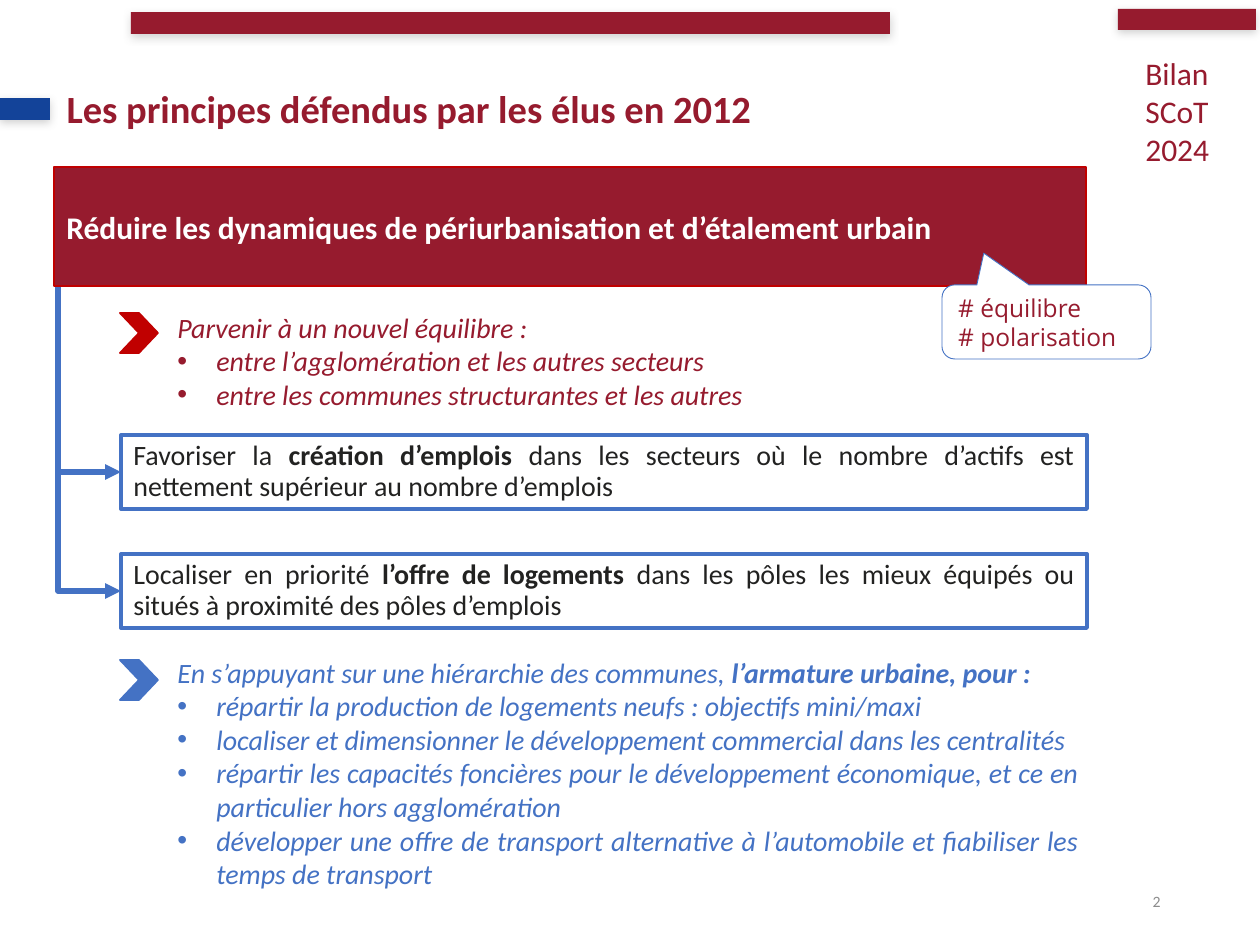
from lxml.etree import SubElement
from pptx import Presentation
from pptx.dml.color import RGBColor
from pptx.enum.shapes import MSO_CONNECTOR, MSO_SHAPE
from pptx.enum.text import MSO_ANCHOR, MSO_AUTO_SIZE, PP_ALIGN
from pptx.oxml import parse_xml
from pptx.oxml.ns import nsdecls, qn
from pptx.util import Pt

EMU_PER_PX = 914400 / 126
RED, BRIGHT_RED, NAVY, BLUE = "961B2E", "C00000", "134399", "4472C4"
WHITE, INK, GREY = "FFFFFF", "222221", "8C8C8C"


def px(length):
    """Turn whole pixels into EMU."""
    return round(length * EMU_PER_PX)


def box_px(box):
    """Turn a left, top, width, height box into EMU."""
    return [px(length) for length in box]


def color(hex_code):
    """Return the colour for a hex string."""
    return RGBColor.from_string(hex_code)


def add_bullet(paragraph):
    """Give a paragraph a hanging round bullet."""
    properties = paragraph._p.get_or_add_pPr()
    properties.set("marL", str(px(39)))
    properties.set("indent", str(-px(39)))
    SubElement(properties, qn("a:buFont"), typeface="Arial")
    SubElement(properties, qn("a:buChar"), char="•")


def write(holder, lines, size, ink, *, font="Calibri", bold=None, italic=None,
          align=PP_ALIGN.LEFT, anchor=MSO_ANCHOR.TOP, spacing=None):
    """Write lines, with ** around bold words and a leading • for bullets."""
    frame = holder.text_frame
    frame.word_wrap = True
    frame.auto_size = MSO_AUTO_SIZE.NONE
    frame.vertical_anchor = anchor
    for index, line in enumerate(lines):
        paragraph = frame.add_paragraph() if index else frame.paragraphs[0]
        if line.startswith("•"):
            add_bullet(paragraph)
        paragraph.alignment = align
        paragraph.line_spacing = spacing
        paragraph.font.name = font
        paragraph.font.size = Pt(size)
        paragraph.font.bold = bold
        paragraph.font.italic = italic
        paragraph.font.color.rgb = color(ink)
        for position, words in enumerate(line.lstrip("•").split("**")):
            run = paragraph.add_run()
            run.text = words
            if position % 2:
                run.font.bold = True


def add_text(slide, box, lines, size, ink, **style):
    """Add a text box."""
    write(slide.shapes.add_textbox(*box_px(box)), lines, size, ink, **style)


def add_panel(slide, kind, box, fill, line=None, width=1):
    """Add a filled preset shape without shadow."""
    panel = slide.shapes.add_shape(kind, *box_px(box))
    panel.shadow.inherit = False
    panel.fill.solid()
    panel.fill.fore_color.rgb = color(fill)
    if line:
        panel.line.color.rgb = color(line)
        panel.line.width = Pt(width)
    else:
        panel.line.fill.background()
    return panel


def add_bar(slide, box, fill):
    """Add a decorative bar with a soft shadow below it."""
    bar = add_panel(slide, MSO_SHAPE.RECTANGLE, box, fill)
    effects = bar._element.spPr.find(qn("a:effectLst"))
    effects.append(parse_xml(
        f'<a:outerShdw {nsdecls("a")} blurRad="{Pt(5)}" dist="{Pt(1.8)}" dir="5400000" rotWithShape="0">'
        '<a:srgbClr val="808080"><a:alpha val="35000"/></a:srgbClr></a:outerShdw>'))


def add_branch(slide, start, end):
    """Add an elbow arrow that goes down, then right."""
    (x1, y1), (x2, y2) = start, end
    run, rise = y2 - y1, x2 - x1
    left, top = (x1 + x2 - run) / 2, (y1 + y2 - rise) / 2
    branch = slide.shapes.add_connector(
        MSO_CONNECTOR.ELBOW, px(left + run), px(top), px(left), px(top + rise))
    branch.line.color.rgb = color(BLUE)
    branch.line.width = Pt(3)
    properties = branch._element.spPr
    properties.find(qn("a:xfrm")).set("rot", "16200000")
    properties.find(qn("a:prstGeom")).set("prst", "bentConnector2")
    SubElement(properties.find(qn("a:ln")), qn("a:tailEnd"), type="triangle")
    SubElement(properties, qn("a:effectLst"))


def add_goal(slide, top, text):
    """Add a framed goal and the branch leading to it."""
    left, height = 121, 74
    goal = add_panel(slide, MSO_SHAPE.RECTANGLE, (left, top, 966, height), WHITE, BLUE, 2.25)
    write(goal, [text], 16, INK, align=PP_ALIGN.JUSTIFY, anchor=MSO_ANCHOR.MIDDLE, spacing=0.9)
    middle = top + height // 2
    add_branch(slide, (58, middle - 232), (left, middle))


def add_title(slide, text):
    """Place and format the title placeholder."""
    title = slide.shapes.title
    title.left, title.top, title.width, title.height = box_px((54, 77, 1032, 69))
    write(title, [text], 22, RED, bold=True, align=PP_ALIGN.JUSTIFY,
          anchor=MSO_ANCHOR.MIDDLE, spacing=0.9)


def main():
    """Build the slide and save it."""
    deck = Presentation()
    deck.slide_width, deck.slide_height = px(1260), px(945)
    slide = deck.slides.add_slide(deck.slide_layouts[5])

    add_bar(slide, (1118, 9, 138, 21), RED)
    add_bar(slide, (131, 12, 759, 22), RED)
    add_bar(slide, (0, 98, 50, 22), NAVY)
    add_title(slide, "Les principes défendus par les élus en 2012")
    add_text(slide, (890, 876, 283, 50), ["2"], 9, GREY,
             align=PP_ALIGN.RIGHT, anchor=MSO_ANCHOR.MIDDLE)
    add_text(slide, (1133, 48, 102, 124), ["Bilan SCoT 2024"], 18, RED)

    add_goal(slide, 435, "Favoriser la **création d’emplois **dans les secteurs où le nombre "
                         "d’actifs est nettement supérieur au nombre d’emplois")
    add_goal(slide, 554, "Localiser en priorité **l’offre de logements **dans les pôles les "
                         "mieux équipés ou situés à proximité des pôles d’emplois")

    for top, fill in ((313, BRIGHT_RED), (660, BLUE)):
        add_panel(slide, MSO_SHAPE.CHEVRON, (120, top, 38, 40), fill, fill)
    add_text(slide, (165, 304, 818, 115), [
        "Parvenir à un nouvel équilibre :",
        "•entre l’agglomération et les autres secteurs",
        "•entre les communes structurantes et les autres",
    ], 16, RED, italic=True)
    add_text(slide, (165, 649, 926, 285), [
        "En s’appuyant sur une hiérarchie des communes, **l’armature urbaine, pour :**",
        "•répartir la production de logements neufs : objectifs mini/maxi",
        "•localiser et dimensionner le développement commercial dans les centralités",
        "•répartir les capacités foncières pour le développement économique, et ce en "
        "particulier hors agglomération",
        "•développer une offre de transport alternative à l’automobile et fiabiliser les "
        "temps de transport",
    ], 16, BLUE, italic=True, align=PP_ALIGN.JUSTIFY)

    banner = add_panel(slide, MSO_SHAPE.RECTANGLE, (54, 167, 1032, 119), RED, BRIGHT_RED, 0.75)
    write(banner, ["Réduire les dynamiques de périurbanisation et d’étalement urbain"],
          18, WHITE, bold=True, anchor=MSO_ANCHOR.MIDDLE)
    keywords = add_panel(slide, MSO_SHAPE.ROUNDED_RECTANGULAR_CALLOUT,
                         (942, 285, 209, 74), WHITE, BLUE, 0.5)
    for index, value in enumerate((-0.3, -0.93, 0.17)):
        keywords.adjustments[index] = value
    write(keywords, ["# équilibre", "# polarisation"], 14, RED,
          font="Open Sans", anchor=MSO_ANCHOR.MIDDLE)

    deck.save("out.pptx")


if __name__ == "__main__":
    main()
